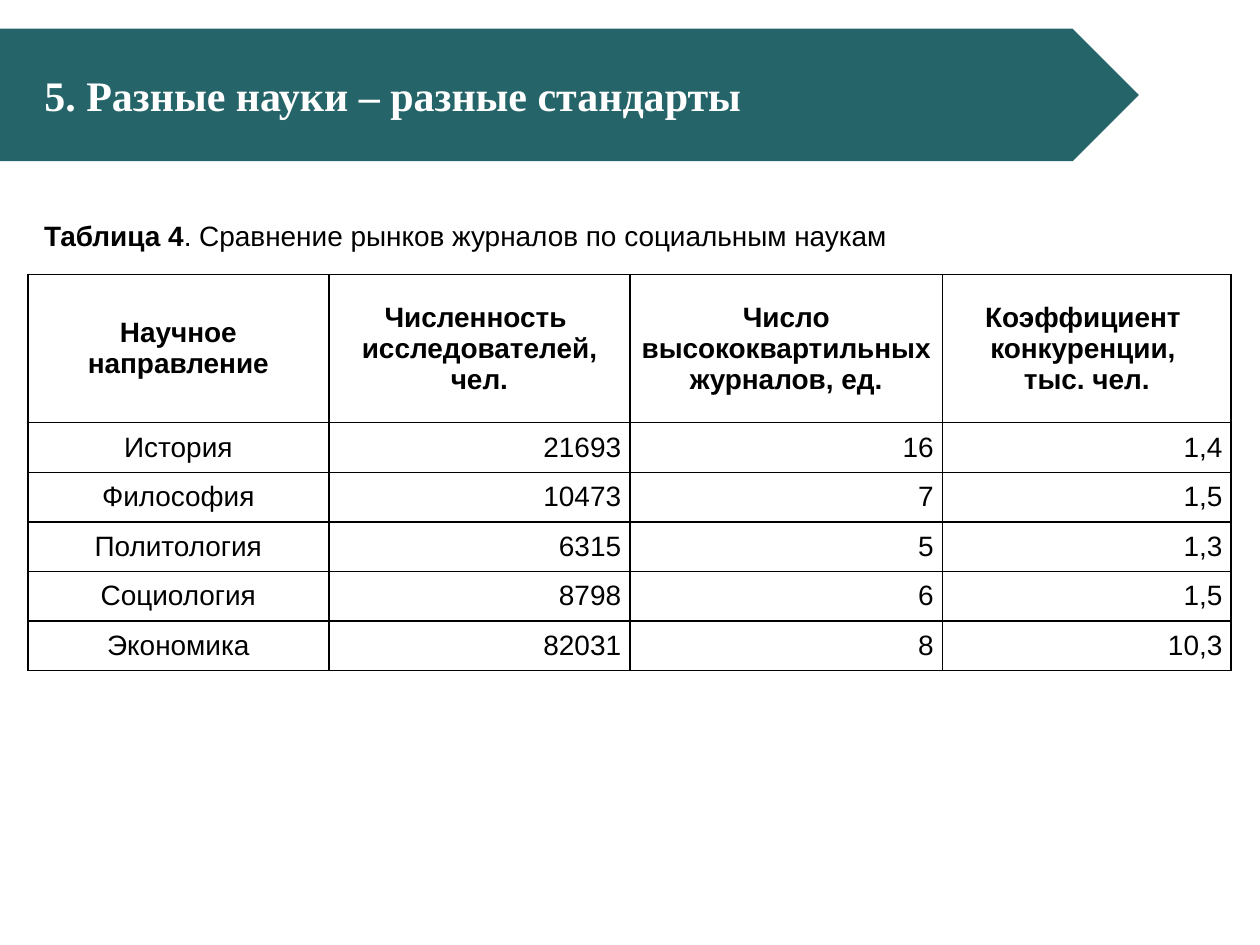
from typing import NamedTuple

from lxml import etree
from pptx import Presentation
from pptx import util as u
from pptx.dml.color import RGBColor
from pptx.enum import shapes, text
from pptx.oxml.ns import qn

HUES = {"teal": "256569", "white": "FFFFFF", "black": "000000"}
ALIGN = text.PP_ALIGN


class Box(NamedTuple):
    left: float
    top: float
    width: float
    height: float

    def cm(self) -> list:
        return [u.Cm(side) for side in self]


class Field(NamedTuple):
    head: str
    width: float
    align: ALIGN


FIELDS = [
    Field("Научное направление", 6.07, ALIGN.CENTER),
    Field("Численность \nисследователей, чел.", 6.07, ALIGN.RIGHT),
    Field("Число высококвартильных журналов, ед.", 6.3, ALIGN.RIGHT),
    Field("Коэффициент \nконкуренции, \nтыс.\u00a0чел.", 5.82, ALIGN.RIGHT),
]
ROWS = [
    ("История", "21693", "16", "1,4"),
    ("Философия", "10473", "7", "1,5"),
    ("Политология", "6315", "5", "1,3"),
    ("Социология", "8798", "6", "1,5"),
    ("Экономика", "82031", "8", "10,3"),
]
HEAD, ROW = 2.99, 1.0

BANNER = Box(0, 0.58, 22.96, 2.67)
TITLE = Box(0.64, 1.27, 14.7, 1.27)
NOTE = Box(0.64, 3.94, 23.62, 1.17)
GRID = Box(0.56, 5.53, sum(f.width for f in FIELDS), HEAD + ROW * len(ROWS))


def color(name: str) -> RGBColor:
    return RGBColor.from_string(HUES[name])


def write(para, words: str, *, size=16, font="Arial", hue="black",
          bold=False, align=ALIGN.LEFT) -> None:
    para.alignment = align
    run = para.add_run()
    run.text = words
    run.font.size = u.Pt(size)
    run.font.name = font
    run.font.bold = bold
    run.font.color.rgb = color(hue)


def border(cell, width: float = 1) -> None:
    props = cell._tc.get_or_add_tcPr()
    for spot, side in enumerate(("lnL", "lnR", "lnT", "lnB")):
        line = etree.Element(qn(f"a:{side}"), w=str(u.Pt(width)))
        fill = etree.SubElement(line, qn("a:solidFill"))
        etree.SubElement(fill, qn("a:srgbClr"), val=HUES["black"])
        props.insert(spot, line)


def fill_cell(cell, words: str, align: ALIGN, bold: bool) -> None:
    cell.fill.background()
    cell.vertical_anchor = text.MSO_ANCHOR.MIDDLE
    cell.margin_left = cell.margin_right = u.Cm(0.18)
    cell.margin_top = cell.margin_bottom = 0
    frame = cell.text_frame
    for spot, part in enumerate(words.split("\n")):
        para = frame.add_paragraph() if spot else frame.paragraphs[0]
        write(para, part, align=align, bold=bold)
    border(cell)


def add_title(slide) -> None:
    title = slide.shapes.title
    title.left, title.top, title.width, title.height = TITLE.cm()
    frame = title.text_frame
    frame.word_wrap = True
    frame.auto_size = text.MSO_AUTO_SIZE.NONE
    frame.vertical_anchor = text.MSO_ANCHOR.MIDDLE
    write(frame.paragraphs[0], "5. Разные науки – разные стандарты",
          size=24, font="Times New Roman", hue="white", bold=True)

    banner = slide.shapes.add_shape(shapes.MSO_SHAPE.PENTAGON, *BANNER.cm())
    banner.shadow.inherit = False
    banner.fill.solid()
    banner.fill.fore_color.rgb = color("teal")
    banner.line.fill.background()
    title.element.addprevious(banner.element)


def add_note(slide) -> None:
    frame = slide.shapes.add_textbox(*NOTE.cm()).text_frame
    frame.word_wrap = True
    para = frame.paragraphs[0]
    para.line_spacing = 1.5
    write(para, "Таблица 4", bold=True)
    write(para, ". Сравнение рынков журналов по социальным наукам")


def add_grid(slide) -> None:
    frame = slide.shapes.add_table(len(ROWS) + 1, len(FIELDS), *GRID.cm())
    table = frame.table
    table.horz_banding = table.first_row = False
    for row in table.rows:
        row.height = u.Cm(ROW)
    table.rows[0].height = u.Cm(HEAD)
    for x, field in enumerate(FIELDS):
        table.columns[x].width = u.Cm(field.width)
        fill_cell(table.cell(0, x), field.head, ALIGN.CENTER, True)
        for y, row in enumerate(ROWS, 1):
            fill_cell(table.cell(y, x), row[x], field.align, False)


def main() -> None:
    deck = Presentation()
    deck.slide_width, deck.slide_height = u.Cm(25.4), u.Cm(19.05)
    slide = deck.slides.add_slide(deck.slide_layouts.get_by_name("Title Only"))
    add_title(slide)
    add_note(slide)
    add_grid(slide)
    deck.save("out.pptx")


if __name__ == "__main__":
    main()
